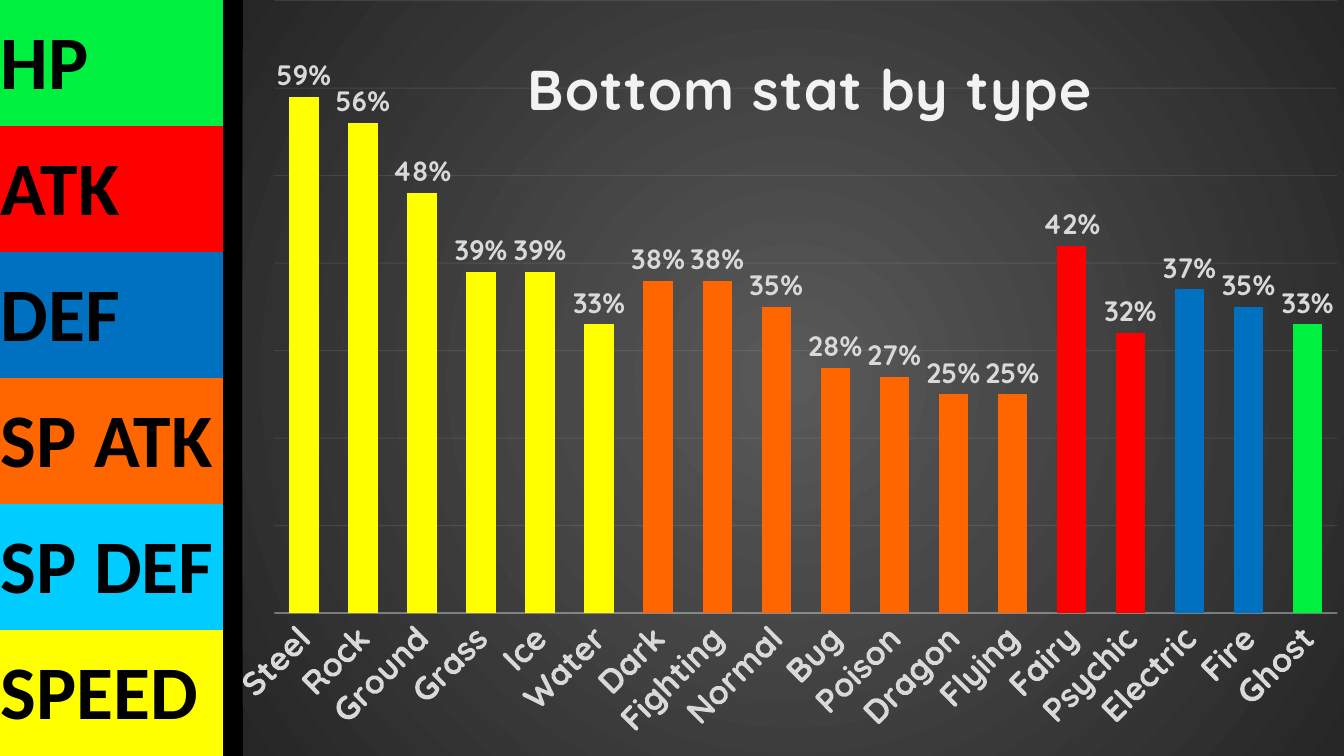
from typing import NamedTuple

from pptx import Presentation
from pptx.chart.chart import Chart
from pptx.chart.data import CategoryChartData
from pptx.dml.color import RGBColor
from pptx.enum.chart import XL_CHART_TYPE, XL_LABEL_POSITION, XL_TICK_MARK
from pptx.enum.text import MSO_ANCHOR
from pptx.oxml import parse_xml
from pptx.oxml.ns import nsdecls
from pptx.slide import Slide
from pptx.text.text import Font
from pptx.util import Inches, Pt


class Stat(NamedTuple):
    name: str
    fill: str


class Bar(NamedTuple):
    kind: str
    share: float
    stat: str


WIDE, HIGH = Inches(13.33), Inches(7.5)
KEY_W = 2.21 / 13.33
PLOT_X = 2.3 / 13.33
PALE, GREY = "F2F2F2", "D9D9D9"
STATS = [
    Stat("HP", "00F03F"),
    Stat("ATK", "FF0000"),
    Stat("DEF", "0070C0"),
    Stat("SP ATK", "FF6600"),
    Stat("SP DEF", "00CCFF"),
    Stat("SPEED", "FFFF00"),
]
BARS = [
    Bar("Steel", 0.59, "SPEED"),
    Bar("Rock", 0.56, "SPEED"),
    Bar("Ground", 0.48, "SPEED"),
    Bar("Grass", 0.39, "SPEED"),
    Bar("Ice", 0.39, "SPEED"),
    Bar("Water", 0.33, "SPEED"),
    Bar("Dark", 0.38, "SP ATK"),
    Bar("Fighting", 0.38, "SP ATK"),
    Bar("Normal", 0.35, "SP ATK"),
    Bar("Bug", 0.28, "SP ATK"),
    Bar("Poison", 0.27, "SP ATK"),
    Bar("Dragon", 0.25, "SP ATK"),
    Bar("Flying", 0.25, "SP ATK"),
    Bar("Fairy", 0.42, "ATK"),
    Bar("Psychic", 0.32, "ATK"),
    Bar("Electric", 0.37, "DEF"),
    Bar("Fire", 0.35, "DEF"),
    Bar("Ghost", 0.33, "HP"),
]


def tint(code: str) -> RGBColor:
    return RGBColor.from_string(code)


def style(font: Font, size: float, code: str, face: str = "Quicksand") -> None:
    font.size, font.name, font.bold = Pt(size), face, True
    font.color.rgb = tint(code)


def place(chart: Chart, node: str, spot: int, **rules: object) -> None:
    box = chart._chartSpace.xpath(f"c:chart/c:{node}")[0]
    for old in box.xpath("c:layout"):
        box.remove(old)
    tags = "".join(f'<c:{key} val="{val}"/>' for key, val in rules.items())
    box.insert(spot, parse_xml(
        f'<c:layout {nsdecls("c")}><c:manualLayout>{tags}</c:manualLayout></c:layout>'))


def fade(chart: Chart, node: str, share: int) -> None:
    for clr in chart._chartSpace.xpath(f".//c:{node}/c:spPr//a:srgbClr"):
        clr.append(parse_xml(f'<a:alpha {nsdecls("a")} val="{share * 1000}"/>'))


def glow(chart: Chart, mid: str, edge: str) -> None:
    chart._chartSpace.xpath("c:chart")[0].addnext(parse_xml(
        f'<c:spPr {nsdecls("c", "a")}><a:gradFill><a:gsLst>'
        f'<a:gs pos="0"><a:srgbClr val="{mid}"/></a:gs>'
        f'<a:gs pos="100000"><a:srgbClr val="{edge}"/></a:gs></a:gsLst>'
        '<a:path path="circle"><a:fillToRect l="50000" t="50000" r="50000" b="50000"/>'
        '</a:path></a:gradFill><a:ln><a:noFill/></a:ln></c:spPr>'))


def draw_title(chart: Chart, text: str) -> None:
    chart.has_title = True
    frame = chart.chart_title.text_frame
    frame.text = text
    run = frame.paragraphs[0].runs[0]
    style(run.font, 40, PALE)
    run.font._element.set("spc", "100")
    place(chart, "title", 1, xMode="edge", yMode="edge", x=0.25, y=0.05)
    chart._chartSpace.xpath("c:chart/c:title/c:overlay")[0].set("val", "1")


def draw_axes(chart: Chart) -> None:
    base, side = chart.category_axis, chart.value_axis
    base.major_tick_mark = base.minor_tick_mark = XL_TICK_MARK.NONE
    style(base.tick_labels.font, 24, GREY)
    chart._chartSpace.xpath(".//c:catAx/c:txPr/a:bodyPr")[0].set("rot", "-2700000")
    side.minimum_scale, side.maximum_scale, side.major_unit = 0, 0.7, 0.1
    side.has_major_gridlines, side.visible = True, False
    for part, node, width, share in (
        (base, "catAx", 1, 54),
        (side.major_gridlines, "majorGridlines", 0.75, 10),
    ):
        part.format.line.color.rgb = tint(PALE)
        part.format.line.width = Pt(width)
        fade(chart, node, share)


def draw_bars(chart: Chart, bars: list[Bar]) -> None:
    plot = chart.plots[0]
    plot.gap_width, plot.overlap, plot.vary_by_categories = 100, -24, False
    fills = {stat.name: stat.fill for stat in STATS}
    for at, bar in enumerate(bars):
        fill = plot.series[0].points[at].format.fill
        fill.solid()
        fill.fore_color.rgb = tint(fills[bar.stat])
    tags = plot.series[0].data_labels
    tags.show_value, tags.position = True, XL_LABEL_POSITION.OUTSIDE_END
    tags.number_format, tags.number_format_is_linked = "0%", False
    style(tags.font, 20, GREY)


def draw_chart(slide: Slide, bars: list[Bar]) -> None:
    data = CategoryChartData(number_format="0%")
    data.categories = [bar.kind for bar in bars]
    data.add_series("Series 1", [bar.share for bar in bars])
    left = int(WIDE * PLOT_X)
    chart = slide.shapes.add_chart(
        XL_CHART_TYPE.COLUMN_CLUSTERED, left, 0, WIDE - left, HIGH, data).chart
    chart.has_legend = False
    chart.font.size, chart.font.name = Pt(10), "Quicksand"
    chart.font.color.rgb = tint("FFFFFF")
    glow(chart, "595959", "262626")
    draw_title(chart, "Bottom stat by type")
    draw_axes(chart)
    draw_bars(chart, bars)
    place(chart, "plotArea", 0, layoutTarget="inner", xMode="edge", yMode="edge",
          x=0.029, y=0.001, w=0.965, h=0.81)


def draw_key(slide: Slide, stats: list[Stat]) -> None:
    frame = slide.shapes.add_table(len(stats), 1, 0, 0, int(WIDE * KEY_W), HIGH)
    table = frame.table
    table.first_row = table.horz_banding = False
    table._tbl.xpath("a:tblPr/a:tableStyleId")[0].text = (
        "{2D5ABB26-0587-4C30-8999-92F81FD0307C}")
    for cell, stat in zip(table.iter_cells(), stats):
        cell.margin_left = cell.margin_right = cell.margin_top = Inches(0.01)
        cell.margin_bottom = 0
        cell.vertical_anchor = MSO_ANCHOR.MIDDLE
        cell.fill.solid()
        cell.fill.fore_color.rgb = tint(stat.fill)
        cell.text_frame.text = stat.name
        style(cell.text_frame.paragraphs[0].runs[0].font, 54, "000000", "Calibri")


def main() -> None:
    deck = Presentation()
    deck.slide_width, deck.slide_height = WIDE, HIGH
    slide = deck.slides.add_slide(deck.slide_layouts[6])
    slide.background.fill.solid()
    slide.background.fill.fore_color.rgb = tint("000000")
    draw_chart(slide, BARS)
    draw_key(slide, STATS)
    deck.save("out.pptx")


if __name__ == "__main__":
    main()
